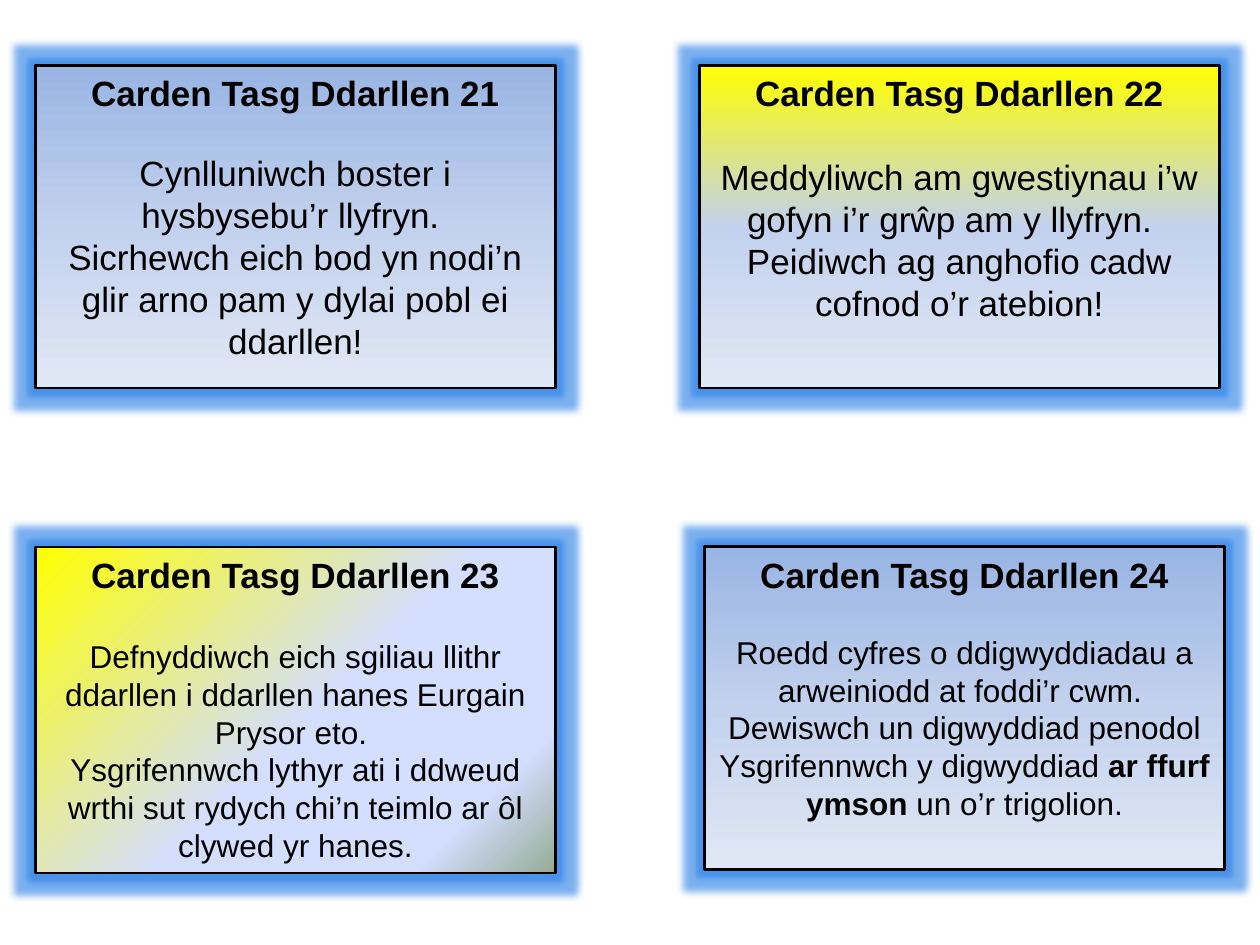
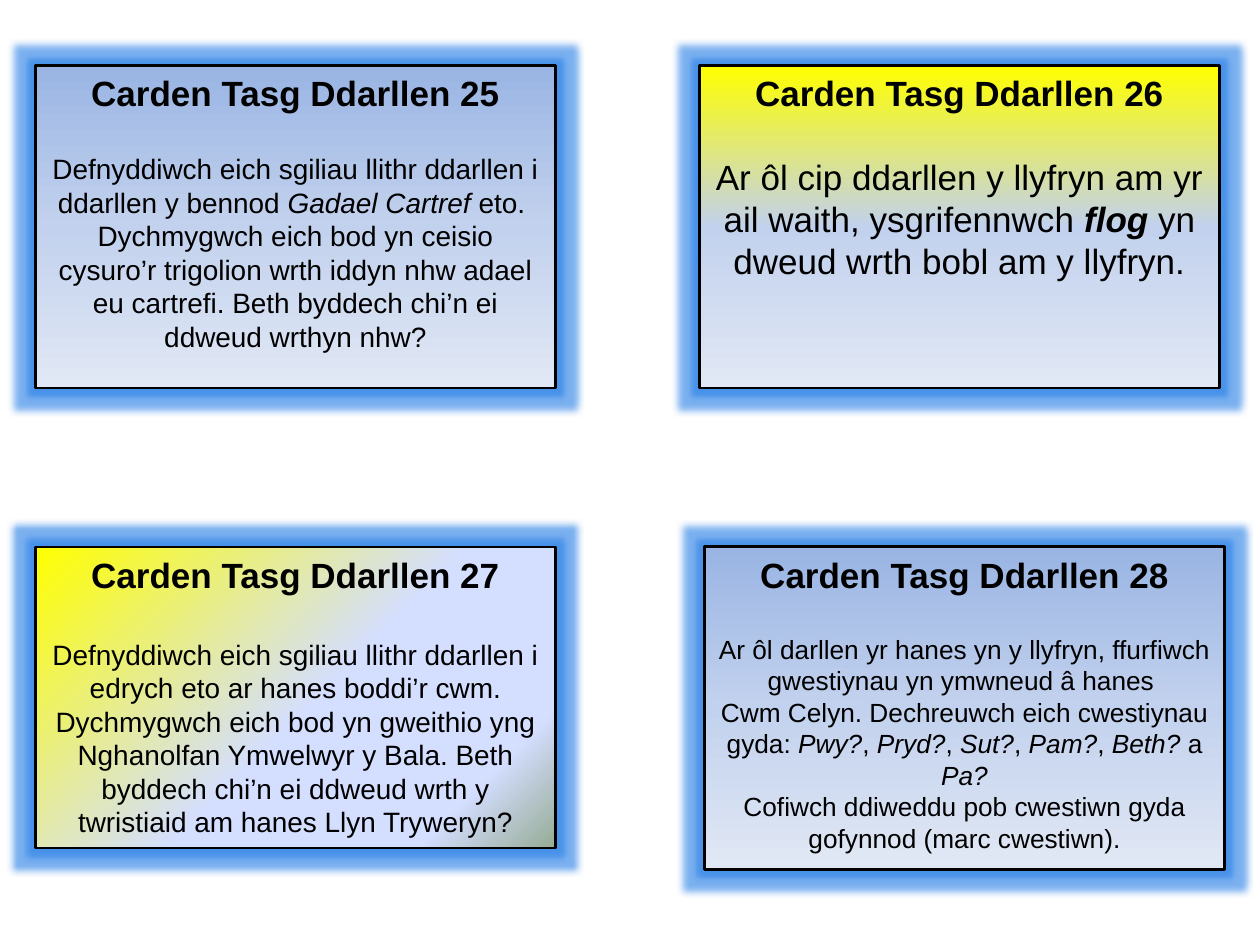
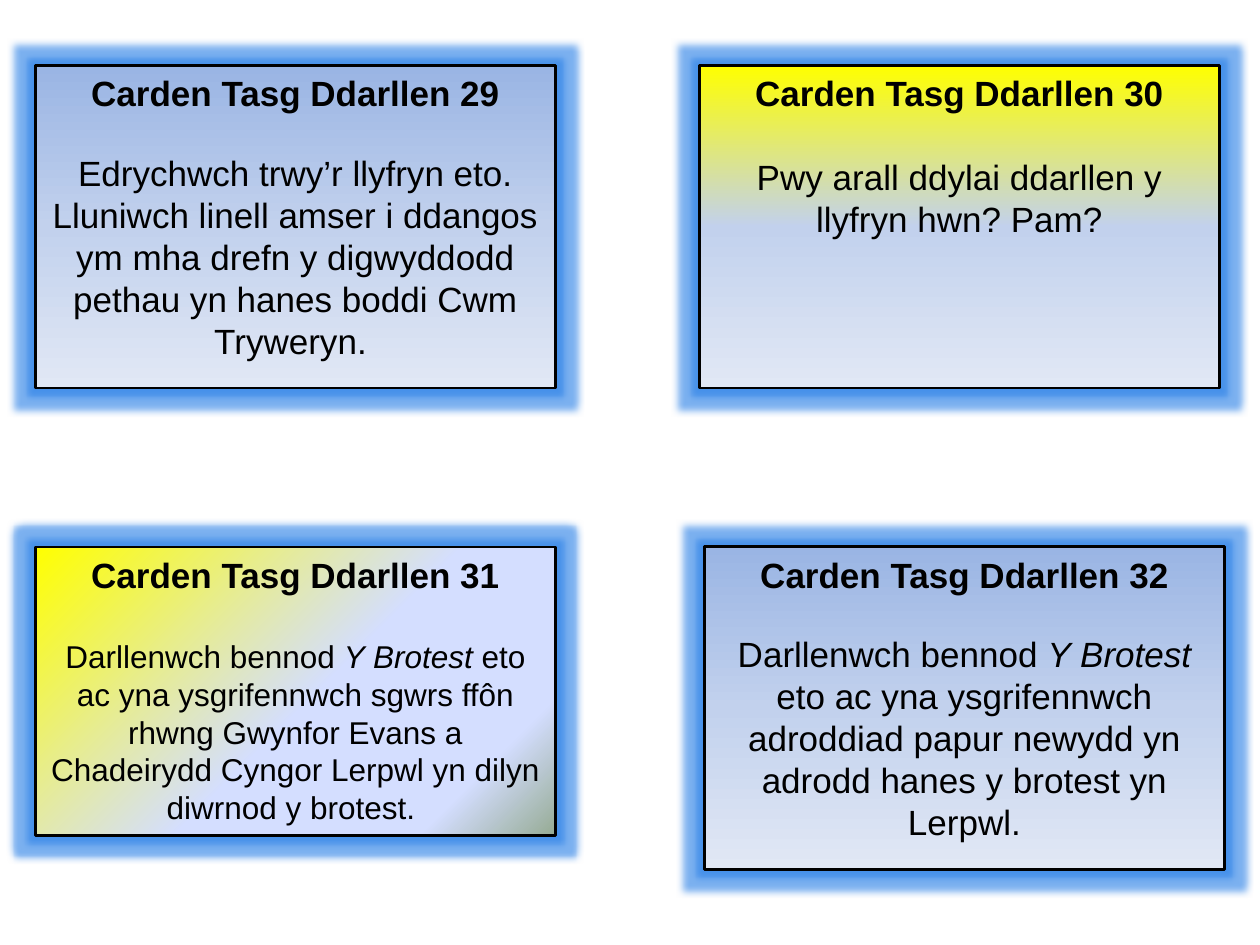
from lxml.etree import SubElement
from pptx import Presentation
from pptx.dml.color import RGBColor
from pptx.enum.shapes import MSO_SHAPE
from pptx.enum.text import MSO_ANCHOR, PP_ALIGN
from pptx.oxml.ns import qn
from pptx.util import Inches, Pt

# Shared style
FONT = "Arial"
TITLE_SIZE = 20
LINE_FACTOR = 1.2
BLACK = RGBColor(0x00, 0x00, 0x00)
YELLOW = RGBColor(0xFF, 0xFF, 0x00)
BLUE = RGBColor(0x9A, 0xB5, 0xE4)
SOFT_BLUE = RGBColor(0xC2, 0xD1, 0xED)
PALE_BLUE = RGBColor(0xE1, 0xE8, 0xF5)
LILAC = RGBColor(0xD4, 0xDE, 0xFF)
SAGE = RGBColor(0x96, 0xAB, 0x94)
GLOW = RGBColor(0x25, 0x7D, 0xE6)

# Gradients: angle (clockwise) and stops
BLUE_FADE = (90, [(0, BLUE), (50, SOFT_BLUE), (100, PALE_BLUE)])
YELLOW_FADE = (90, [(0, YELLOW), (50, SOFT_BLUE), (100, PALE_BLUE)])
DIAGONAL_FADE = (45, [(0, YELLOW), (53, LILAC), (83, LILAC), (100, SAGE)])

# The four card places on each page: left, top, gradient, gap under the title
CARD_WIDTH, CARD_HEIGHT = 4.13, 2.56
PLACES = [
    (0.28, 0.52, BLUE_FADE, 18),
    (5.55, 0.52, YELLOW_FADE, 20),
    (0.28, 4.34, DIAGONAL_FADE, 20),
    (5.59, 4.34, BLUE_FADE, 18),
]
FIRST_NUMBER = 21

# Cards: text size, height, paragraphs; a paragraph is a list of (text, style)
# spans, where style holds "b" for bold and "i" for italic
PAGES = [
    [
        (20, CARD_HEIGHT, [
            [("Cynlluniwch boster i hysbysebu’r llyfryn. ", "")],
            [("Sicrhewch eich bod yn nodi’n glir arno pam y dylai pobl ei ddarllen!", "")],
        ]),
        (20, CARD_HEIGHT, [
            [("Meddyliwch am gwestiynau i’w gofyn i’r grŵp am y llyfryn.  ", "")],
            [("Peidiwch ag anghofio cadw cofnod o’r atebion!", "")],
        ]),
        (18, 2.59, [
            [("Defnyddiwch eich sgiliau llithr ddarllen i ddarllen hanes "
              "Eurgain Prysor eto. ", "")],
            [("Ysgrifennwch lythyr ati i ddweud wrthi sut rydych chi’n teimlo "
              "ar ôl clywed yr hanes.", "")],
        ]),
        (18, CARD_HEIGHT, [
            [("Roedd cyfres o ddigwyddiadau a arweiniodd at foddi’r cwm. ", "")],
            [("Dewiswch un digwyddiad penodol Ysgrifennwch y digwyddiad ", ""),
             ("ar ffurf ymson", "b"), (" un o’r trigolion.", "")],
        ]),
    ],
    [
        (16, CARD_HEIGHT, [
            [("Defnyddiwch eich sgiliau llithr ddarllen i ddarllen y bennod ", ""),
             ("Gadael Cartref ", "i"), ("eto. ", "")],
            [("Dychmygwch eich bod yn ceisio cysuro’r trigolion wrth iddyn nhw adael "
              "eu cartrefi. Beth byddech chi’n ei ddweud wrthyn nhw?", "")],
        ]),
        (20, CARD_HEIGHT, [
            [("Ar ôl cip ddarllen y llyfryn am yr ail waith, ysgrifennwch ", ""),
             ("flog", "bi"), (" yn dweud wrth bobl am y llyfryn.", "")],
        ]),
        (16, 2.39, [
            [("Defnyddiwch eich sgiliau llithr ddarllen i edrych eto ar hanes "
              "boddi’r cwm.", "")],
            [("Dychmygwch eich bod yn gweithio yng Nghanolfan Ymwelwyr y Bala. Beth "
              "byddech chi’n ei ddweud wrth y twristiaid am hanes Llyn Tryweryn?", "")],
        ]),
        (15, CARD_HEIGHT, [
            [("Ar ôl darllen yr hanes yn y llyfryn, ffurfiwch gwestiynau yn "
              "ymwneud â hanes ", "")],
            [("Cwm Celyn. Dechreuwch eich cwestiynau gyda: ", ""),
             ("Pwy?", "i"), (", ", ""), ("Pryd?", "i"), (", ", ""),
             ("Sut?", "i"), (", ", ""), ("Pam?", "i"), (", ", ""),
             ("Beth?", "i"), (" a ", ""), ("Pa?", "i")],
            [("Cofiwch ddiweddu pob cwestiwn gyda gofynnod (marc cwestiwn).", "")],
        ]),
    ],
    [
        (20, CARD_HEIGHT, [
            [("Edrychwch trwy’r llyfryn eto. Lluniwch linell amser i ddangos ym mha "
              "drefn y digwyddodd pethau yn hanes boddi Cwm Tryweryn. ", "")],
        ]),
        (20, CARD_HEIGHT, [
            [("Pwy arall ddylai ddarllen y llyfryn hwn? Pam?", "")],
        ]),
        (18, 2.29, [
            [("Darllenwch bennod ", ""), ("Y Brotest ", "i"),
             ("eto ac yna ysgrifennwch sgwrs ffôn rhwng Gwynfor Evans a Chadeirydd "
              "Cyngor Lerpwl yn dilyn diwrnod y brotest. ", "")],
        ]),
        (20, CARD_HEIGHT, [
            [("Darllenwch bennod ", ""), ("Y Brotest ", "i"),
             ("eto ac yna ysgrifennwch adroddiad papur newydd yn adrodd hanes "
              "y brotest yn Lerpwl.", "")],
        ]),
    ],
]


def add_span(para, text, size=TITLE_SIZE, bold=False, italic=False, color=BLACK):
    span = para.add_run()
    span.text = text
    span.font.name = FONT
    span.font.size = Pt(size)
    span.font.bold = bold
    span.font.italic = italic
    span.font.color.rgb = color


def format_paragraph(para, size, gap_after=0):
    para.alignment = PP_ALIGN.CENTER
    para.line_spacing = Pt(size * LINE_FACTOR)
    para.space_after = Pt(gap_after * LINE_FACTOR)


def set_gradient(box, angle, stops):
    box.fill.gradient()
    box.fill.gradient_angle = 360 - angle
    stop_list = box.element.spPr.find(".//" + qn("a:gsLst"))
    for old_stop in list(stop_list):
        stop_list.remove(old_stop)
    for position, color in stops:
        stop = SubElement(stop_list, qn("a:gs"), pos=str(position * 1000))
        SubElement(stop, qn("a:srgbClr"), val=str(color))


def add_glow(box, radius=8, opacity=60):
    box.shadow.inherit = False
    effects = box.element.spPr.find(qn("a:effectLst"))
    glow = SubElement(effects, qn("a:glow"), rad=str(Pt(radius)))
    color = SubElement(glow, qn("a:srgbClr"), val=str(GLOW))
    SubElement(color, qn("a:alpha"), val=str(opacity * 1000))


def add_card(page, place, number, card):
    left, top, gradient, gap = place
    size, height, paragraphs = card
    box = page.shapes.add_shape(MSO_SHAPE.RECTANGLE, Inches(left), Inches(top),
                                Inches(CARD_WIDTH), Inches(height))
    set_gradient(box, *gradient)
    box.line.color.rgb = BLACK
    box.line.width = Pt(1.5)
    add_glow(box)

    # Title, then the task
    frame = box.text_frame
    frame.word_wrap = True
    frame.vertical_anchor = MSO_ANCHOR.TOP
    title = frame.paragraphs[0]
    format_paragraph(title, TITLE_SIZE, gap_after=gap)
    add_span(title, f"Carden Tasg Ddarllen {number}", bold=True)
    for spans in paragraphs:
        para = frame.add_paragraph()
        format_paragraph(para, size)
        for text, style in spans:
            add_span(para, text, size=size, bold="b" in style, italic="i" in style)


def main():
    deck = Presentation()
    deck.slide_width, deck.slide_height = Inches(10), Inches(7.5)
    number = FIRST_NUMBER
    for cards in PAGES:
        page = deck.slides.add_slide(deck.slide_layouts[6])
        for place, card in zip(PLACES, cards):
            add_card(page, place, number, card)
            number += 1
    deck.save("out.pptx")


if __name__ == "__main__":
    main()
